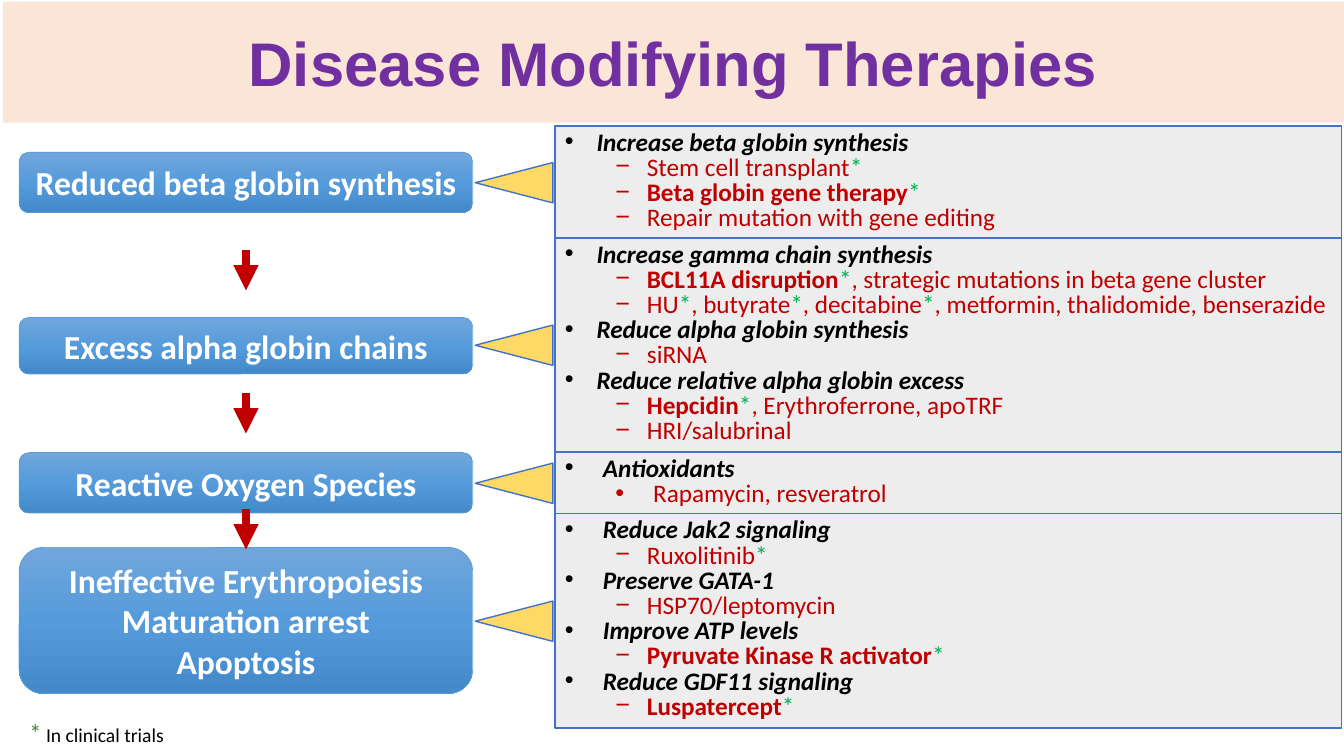
from copy import deepcopy
from dataclasses import dataclass

from lxml.etree import SubElement
from pptx import Presentation
from pptx.dml.color import RGBColor as RGB
from pptx.enum.shapes import MSO_CONNECTOR as Link, MSO_SHAPE as Kind
from pptx.enum.text import MSO_ANCHOR as Anchor, PP_ALIGN as Align
from pptx.oxml.ns import qn
from pptx.util import Pt


@dataclass(frozen=True)
class Theme:
    heading_font: str = "Arial"
    body_font: str = "Calibri"
    heading_size: int = 44
    stage_size: int = 24
    therapy_size: int = 18
    note_size: int = 14
    heading: str = "7030A0"
    banner: str = "FBE5D6"
    stage: tuple = ("71A6DB", "559BDB", "448ACA")
    stage_edge: str = "5B9BD5"
    panel: str = "EDEDED"
    edge: str = "4472C4"
    pointer: str = "FFD966"
    accent: str = "C00000"
    trial: str = "00B050"
    note_mark: str = "548235"
    white: str = "FFFFFF"
    black: str = "000000"


class TherapySlide:
    def __init__(self, deck, theme):
        self.theme = theme
        self.shapes = deck.slides.add_slide(deck.slide_layouts[6]).shapes

    def shape(self, kind, box, fill=None, edge=None, weight=1):
        item = self.shapes.add_shape(kind, *map(Pt, box))
        item.shadow.inherit = False
        if fill:
            item.fill.solid()
            item.fill.fore_color.rgb = RGB.from_string(fill)
        if edge:
            item.line.color.rgb = RGB.from_string(edge)
            item.line.width = Pt(weight)
        else:
            item.line.fill.background()
        return item

    def style(self, font, size, color, bold=False, italic=False, face=None):
        font.name = face or self.theme.body_font
        font.size = Pt(size)
        font.color.rgb = RGB.from_string(color)
        font.bold, font.italic = bold, italic

    def banner(self, box, title):
        t = self.theme
        frame = self.shape(Kind.RECTANGLE, box, t.banner).text_frame
        frame.margin_left = frame.margin_right = 0
        frame.margin_top = frame.margin_bottom = 0
        frame.word_wrap = True
        frame.text = title
        heading = frame.paragraphs[0]
        heading.alignment = Align.CENTER
        self.style(heading.font, t.heading_size, t.heading, True, face=t.heading_font)

    def stage(self, box, text):
        t = self.theme
        item = self.shape(Kind.ROUNDED_RECTANGLE, box, edge=t.stage_edge, weight=0.5)
        item.fill.gradient()
        item.fill.gradient_angle = 270
        stops = item.fill._fill._gradFill.find(qn("a:gsLst"))
        stops.insert(1, deepcopy(stops[0]))
        for place, (stop, color) in enumerate(zip(item.fill.gradient_stops, t.stage)):
            stop.position = place / 2
            stop.color.rgb = RGB.from_string(color)
        item.text_frame.word_wrap = True
        item.text_frame.text = text
        for line in item.text_frame.paragraphs:
            line.alignment = Align.CENTER
            self.style(line.font, t.stage_size, t.white, True)

    def arrow(self, x, top, length):
        item = self.shapes.add_connector(
            Link.STRAIGHT, Pt(x), Pt(top), Pt(x), Pt(top + length))
        item.line.color.rgb = RGB.from_string(self.theme.accent)
        item.line.width = Pt(6)
        SubElement(item.line._ln, qn("a:tailEnd"), type="triangle")
        SubElement(item._element.spPr, qn("a:effectLst"))

    def pointer(self, center_x, center_y, width, height):
        t = self.theme
        box = (center_x - width / 2, center_y - height / 2, width, height)
        self.shape(Kind.ISOSCELES_TRIANGLE, box, t.pointer, t.edge).rotation = 270

    def bullet(self, line, mark, left, hang):
        props = line._p.get_or_add_pPr()
        props.set("marL", str(Pt(left)))
        props.set("indent", str(Pt(-hang)))
        SubElement(props, qn("a:buFont"), typeface=self.theme.heading_font)
        SubElement(props, qn("a:buChar"), char=mark)

    def panel(self, box, hang, sub_mark, sub_hang, goals):
        t = self.theme
        frame = self.shape(Kind.RECTANGLE, box, t.panel, t.edge).text_frame
        frame.word_wrap = True
        frame.vertical_anchor = Anchor.TOP
        rows = [row for goal, therapies in goals
                for row in [(0, goal), *((1, therapy) for therapy in therapies)]]
        for place, (level, text) in enumerate(rows):
            line = frame.add_paragraph() if place else frame.paragraphs[0]
            line.alignment = Align.LEFT
            line.level = level
            line.line_spacing = Pt(18)
            if level:
                self.bullet(line, sub_mark, 36 + sub_hang, sub_hang)
                self.style(line.font, t.therapy_size, t.accent)
                self.therapy(line, text)
            else:
                self.bullet(line, "•", hang, hang)
                self.style(line.font, t.therapy_size, t.black, True, True)
                line.add_run().text = text

    def therapy(self, line, text):
        strong = text.startswith("!")
        for place, part in enumerate(text.lstrip("!").split("*")):
            if place:
                mark = line.add_run()
                mark.text = "*"
                mark.font.color.rgb = RGB.from_string(self.theme.trial)
            if part:
                name = line.add_run()
                name.text = part
                if strong and not place:
                    name.font.bold = True

    def footnote(self, box, mark, text):
        t = self.theme
        frame = self.shapes.add_textbox(*map(Pt, box)).text_frame
        frame.word_wrap = True
        for part, size, color in ((mark, t.therapy_size, t.note_mark),
                                  (text, t.note_size, t.black)):
            run = frame.paragraphs[0].add_run()
            run.text = part
            self.style(run.font, size, color)


STAGES = [
    (108.7, 43.2, "Reduced beta globin synthesis"),
    (226.8, 40.3, "Excess alpha globin chains"),
    (323.3, 43.2, "Reactive Oxygen Species"),
    (391, 104.4, "Ineffective Erythropoiesis\nMaturation arrest\nApoptosis"),
]
ARROW_TOPS = [178.6, 280.8, 363.6]
POINTER_CENTERS = [130.5, 246.6, 345.2, 443.7]
PANELS = [
    (90, 80, 22.5, "−", 22.5, [
        ("Increase beta globin synthesis", [
            "Stem cell transplant*", "!Beta globin gene therapy*",
            "Repair mutation with gene editing"])]),
    (170, 153, 22.5, "−", 22.5, [
        ("Increase gamma chain synthesis", [
            "!BCL11A disruption*, strategic mutations in beta gene cluster",
            "HU*, butyrate*, decitabine*, metformin, thalidomide, benserazide"]),
        ("Reduce alpha globin synthesis", ["siRNA"]),
        ("Reduce relative alpha globin excess", [
            "!Hepcidin*, Erythroferrone, apoTRF", "HRI/salubrinal"])]),
    (323, 44, 27, "•", 27, [("Antioxidants", ["Rapamycin, resveratrol"])]),
    (367, 153, 27, "−", 22.5, [
        ("Reduce Jak2 signaling", ["Ruxolitinib*"]),
        ("Preserve GATA-1", ["HSP70/leptomycin"]),
        ("Improve ATP levels", ["!Pyruvate Kinase R activator*"]),
        ("Reduce GDF11 signaling", ["!Luspatercept*"])]),
]


def main():
    deck = Presentation()
    deck.slide_width, deck.slide_height = Pt(960), Pt(540)
    slide = TherapySlide(deck, Theme())
    slide.banner((2, 1.2, 958, 86.4), "Disease Modifying Therapies")
    for top, height, text in STAGES:
        slide.stage((13.7, top, 324, height), text)
    for top in ARROW_TOPS:
        slide.arrow(175.7, top, 28.8)
    for top, height, *content in PANELS:
        slide.panel((396.5, top, 561.6, height), *content)
    for center in POINTER_CENTERS:
        slide.pointer(367.2, center, 28.8, 55.4)
    slide.footnote((13.7, 509, 151.2, 28.8), "*", " In clinical trials")
    deck.save("out.pptx")


if __name__ == "__main__":
    main()
